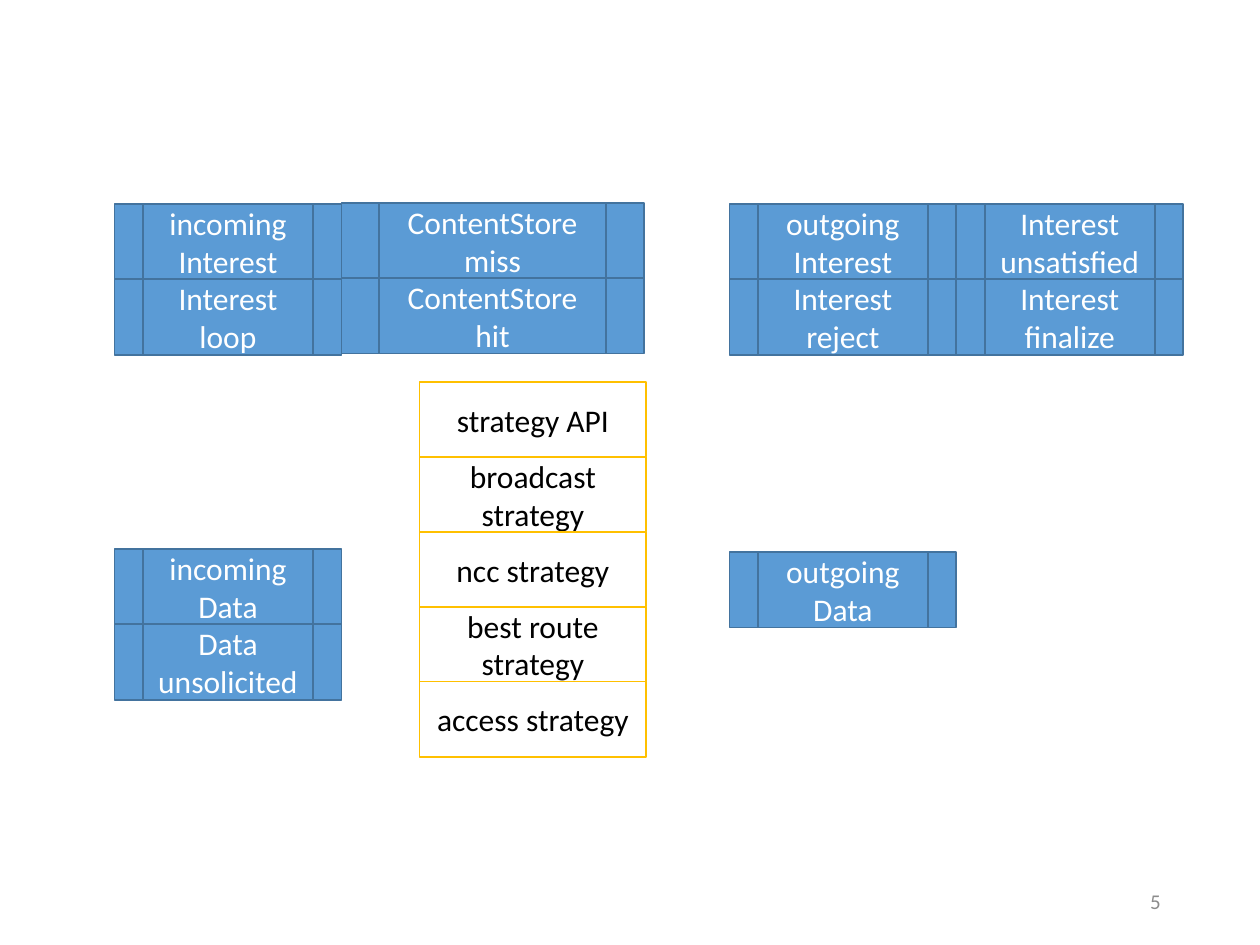
from pptx import Presentation
from pptx.dml.color import RGBColor
from pptx.enum.shapes import MSO_SHAPE
from pptx.enum.text import MSO_ANCHOR, PP_ALIGN
from pptx.util import Inches, Pt

COLORS = {
    "pipeline": "5B9BD5",
    "pipeline_line": "43739E",
    "strategy": "FFFFFF",
    "strategy_line": "FFC000",
    "white": "FFFFFF",
    "black": "000000",
    "gray": "8C8C8C",
}
BOX_HEIGHT = 0.6
ROW_STEP = 0.595


def write_text(shape, text, size=18, color="white", align=PP_ALIGN.CENTER):
    frame = shape.text_frame
    frame.word_wrap = True
    frame.vertical_anchor = MSO_ANCHOR.MIDDLE
    paragraph = frame.paragraphs[0]
    paragraph.alignment = align
    run = paragraph.add_run()
    run.text = text
    run.font.name = "Calibri"
    run.font.size = Pt(size)
    run.font.color.rgb = RGBColor.from_string(COLORS[color])


presentation = Presentation()
presentation.slide_width = Inches(10)
presentation.slide_height = Inches(7.5)
slide = presentation.slides.add_slide(presentation.slide_layouts[6])

page_number = slide.shapes.add_textbox(Inches(7.06), Inches(6.95), Inches(2.25), Inches(0.4))
write_text(page_number, "5", size=12, color="gray", align=PP_ALIGN.RIGHT)

# Each stack: kind, left, top, width, labels from top to bottom
stacks = [
    ("pipeline", 0.91, 1.62, 1.8, ["incoming Interest", "Interest loop"]),
    ("pipeline", 0.91, 4.36, 1.8, ["incoming Data", "Data unsolicited"]),
    ("pipeline", 5.79, 1.62, 1.8, ["outgoing Interest", "Interest reject"]),
    ("pipeline", 5.79, 4.38, 1.8, ["outgoing Data"]),
    ("pipeline", 7.59, 1.62, 1.8, ["Interest unsatisfied", "Interest finalize"]),
    ("pipeline", 2.71, 1.61, 2.4, ["ContentStore miss", "ContentStore hit"]),
    ("strategy", 3.33, 3.03, 1.8, [
        "strategy API",
        "broadcast strategy",
        "ncc strategy",
        "best route strategy",
        "access strategy",
    ]),
]
shape_types = {
    "pipeline": MSO_SHAPE.FLOWCHART_PREDEFINED_PROCESS,
    "strategy": MSO_SHAPE.RECTANGLE,
}
text_colors = {"pipeline": "white", "strategy": "black"}

for kind, left, top, width, labels in stacks:
    for row, label in enumerate(labels):
        box = slide.shapes.add_shape(
            shape_types[kind], Inches(left), Inches(top + row * ROW_STEP),
            Inches(width), Inches(BOX_HEIGHT))
        box.shadow.inherit = False
        box.fill.solid()
        box.fill.fore_color.rgb = RGBColor.from_string(COLORS[kind])
        box.line.color.rgb = RGBColor.from_string(COLORS[kind + "_line"])
        box.line.width = Pt(1)
        write_text(box, label, color=text_colors[kind])

presentation.save("out.pptx")
